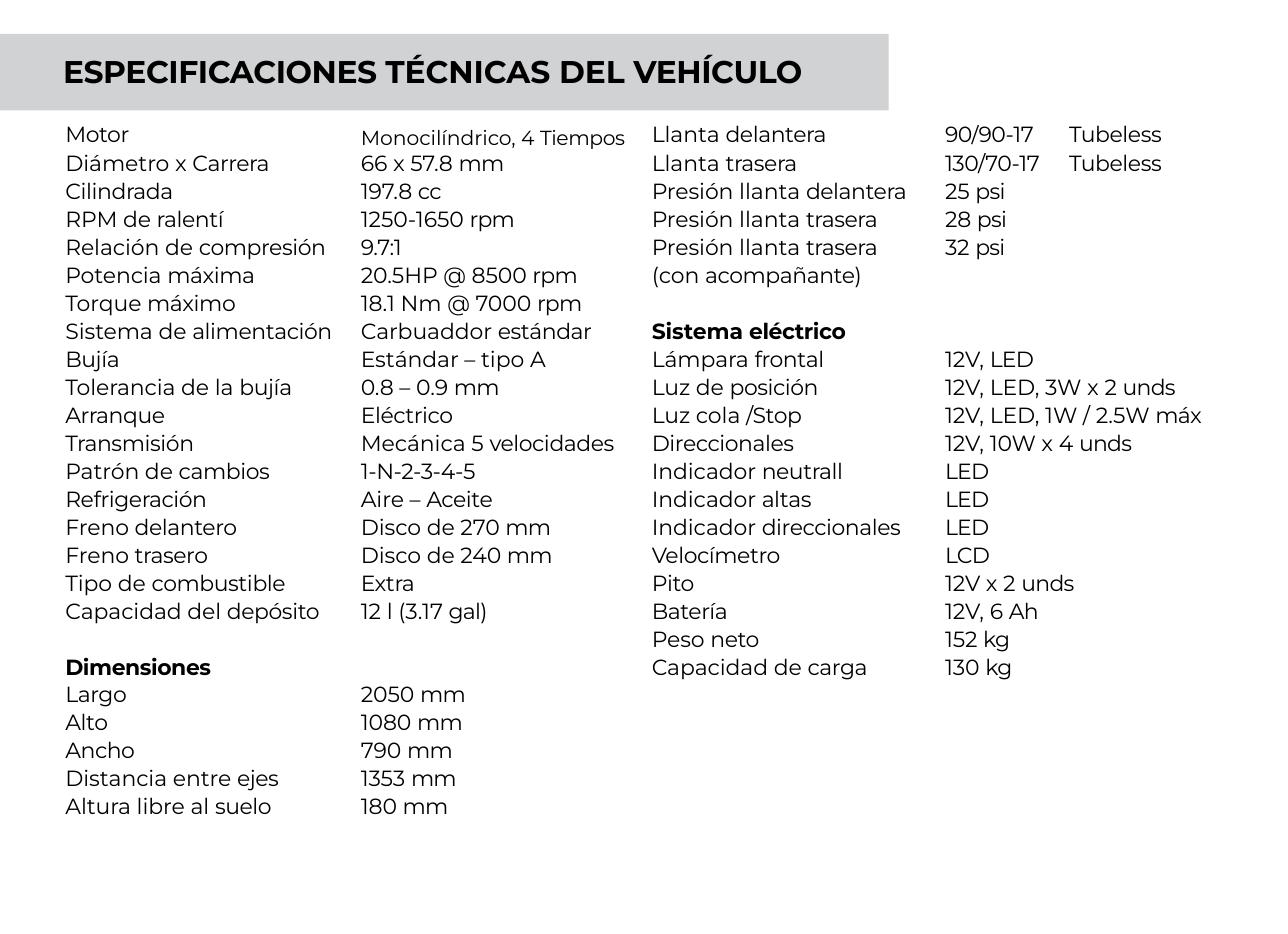
import pptx
import pptx.util
import pptx.dml.color
import pptx.enum.shapes
import pptx.oxml.ns
import lxml.etree

Inches = pptx.util.Inches
Pt = pptx.util.Pt


def color(hex_value):
    return pptx.dml.color.RGBColor.from_string(hex_value)


def add_run(p, text, spacing, size, bold=False):
    r = p.add_run()
    r.text = text
    for name, value in {"name": "Montserrat", "size": Pt(size), "bold": bold}.items():
        setattr(r.font, name, value)
    r.font.color.rgb = color("000000")
    r.font._element.set("spc", str(spacing))


rows = [
    ("Motor", "Monocilíndrico, 4 Tiempos", "Llanta delantera", "90/90-17\tTubeless"),
    ("Diámetro x Carrera", "66 x 57.8 mm", "Llanta trasera", "130/70-17\tTubeless"),
    ("Cilindrada", "197.8 cc", "Presión llanta delantera", "25 psi"),
    ("RPM de ralentí", "1250-1650 rpm", "Presión llanta trasera", "28 psi"),
    ("Relación de compresión", "9.7:1", "Presión llanta trasera", "32 psi"),
    ("Potencia máxima", "20.5HP @ 8500 rpm", "(con acompañante)", ""),
    ("Torque máximo", "18.1 Nm @ 7000 rpm", "", ""),
    ("Sistema de alimentación", "Carbuaddor estándar", "Sistema eléctrico", ""),
    ("Bujía", "Estándar – tipo A", "Lámpara frontal", "12V, LED"),
    ("Tolerancia de la bujía", "0.8 – 0.9 mm", "Luz de posición", "12V, LED, 3W x 2 unds"),
    ("Arranque", "Eléctrico", "Luz cola /Stop", "12V, LED, 1W / 2.5W máx"),
    ("Transmisión", "Mecánica 5 velocidades", "Direccionales", "12V, 10W x 4 unds"),
    ("Patrón de cambios", "1-N-2-3-4-5", "Indicador neutrall", "LED"),
    ("Refrigeración", "Aire – Aceite", "Indicador altas", "LED"),
    ("Freno delantero", "Disco de 270 mm", "Indicador direccionales", "LED"),
    ("Freno trasero", "Disco de 240 mm", "Velocímetro", "LCD"),
    ("Tipo de combustible", "Extra", "Pito", "12V x 2 unds"),
    ("Capacidad del depósito", "12 l (3.17 gal)", "Batería", "12V, 6 Ah"),
    ("", "", "Peso neto", "152 kg"),
    ("Dimensiones", "", "Capacidad de carga", "130 kg"),
    ("Largo", "2050 mm", "", ""),
    ("Alto", "1080 mm", "", ""),
    ("Ancho", "790 mm", "", ""),
    ("Distancia entre ejes", "1353 mm", "", ""),
    ("Altura libre al suelo", "180 mm", "", ""),
]
headings = {"Sistema eléctrico", "Dimensiones"}
units = {"mm", "cc", "rpm", "psi", "unds", "máx", "kg", "LED", "LCD", "Ah", "gal)"}
widths = [1.29, 1.29, 1.28, 1.26]
indents = [0.03, 0.05, 0.05, 0.07]

prs = pptx.Presentation()
prs.slide_width, prs.slide_height = Inches(5.71), Inches(4.14)
s = prs.slides.add_slide(prs.slide_layouts[6])

bar = s.shapes.add_shape(pptx.enum.shapes.MSO_SHAPE.RECTANGLE,
                         Inches(0), Inches(0.15), Inches(3.94), Inches(0.34))
bar.shadow.inherit = False
bar.fill.solid()
bar.fill.fore_color.rgb = color("D1D2D3")
bar.line.fill.background()

title = s.shapes.add_textbox(Inches(0.27), Inches(0.22), Inches(3.4), Inches(0.19))
tf = title.text_frame
for name, value in {"margin_left": 0, "margin_top": Inches(0.01), "margin_right": 0,
                    "margin_bottom": 0, "word_wrap": True}.items():
    setattr(tf, name, value)
p = tf.paragraphs[0]
p.space_before = Pt(0.9)
p._p.get_or_add_pPr().set("marL", str(Inches(0.01)))
for text, spacing in [("ESPECIFICACIONES ", -10), ("TÉCNICAS DEL ", 0), ("VEHÍCULO", -10)]:
    add_run(p, text, spacing, 10, True)

frame = s.shapes.add_table(len(rows), len(widths), Inches(0.26), Inches(0.55),
                           Inches(sum(widths)), Inches(3.11))
table = frame.table
table.first_row = False
table.horz_banding = False
for column, width in zip(table.columns, widths):
    column.width = Inches(width)

for i, texts in enumerate(rows):
    for j, text in enumerate(texts):
        cell = table.cell(i, j)
        cell.fill.background()
        for side in ("left", "top", "right", "bottom"):
            setattr(cell, "margin_" + side, 0)
        p = cell.text_frame.paragraphs[0]
        p.line_spacing = Pt(7.8 if i in (0, len(rows) - 1) else 8)
        pPr = p._p.get_or_add_pPr()
        pPr.set("marL", str(Inches(indents[j])))
        if not text:
            end = lxml.etree.SubElement(p._p, pptx.oxml.ns.qn("a:endParaRPr"))
            end.set("sz", "700")
            continue
        if "\t" in text:
            tabs = lxml.etree.SubElement(pPr, pptx.oxml.ns.qn("a:tabLst"))
            tab = lxml.etree.SubElement(tabs, pptx.oxml.ns.qn("a:tab"))
            tab.set("pos", str(Inches(0.55)))
            tab.set("algn", "l")
        size = 7
        if (i, j) == (0, 1):
            size = 6.5
            p.space_before = Pt(0.5)
            cell.margin_top = Inches(0.01)
        start, space, last = text.rpartition(" ")
        if start:
            add_run(p, start + space, 0, size, text in headings)
        add_run(p, last, -20 if last in units else -10, size, text in headings)

prs.save("out.pptx")
